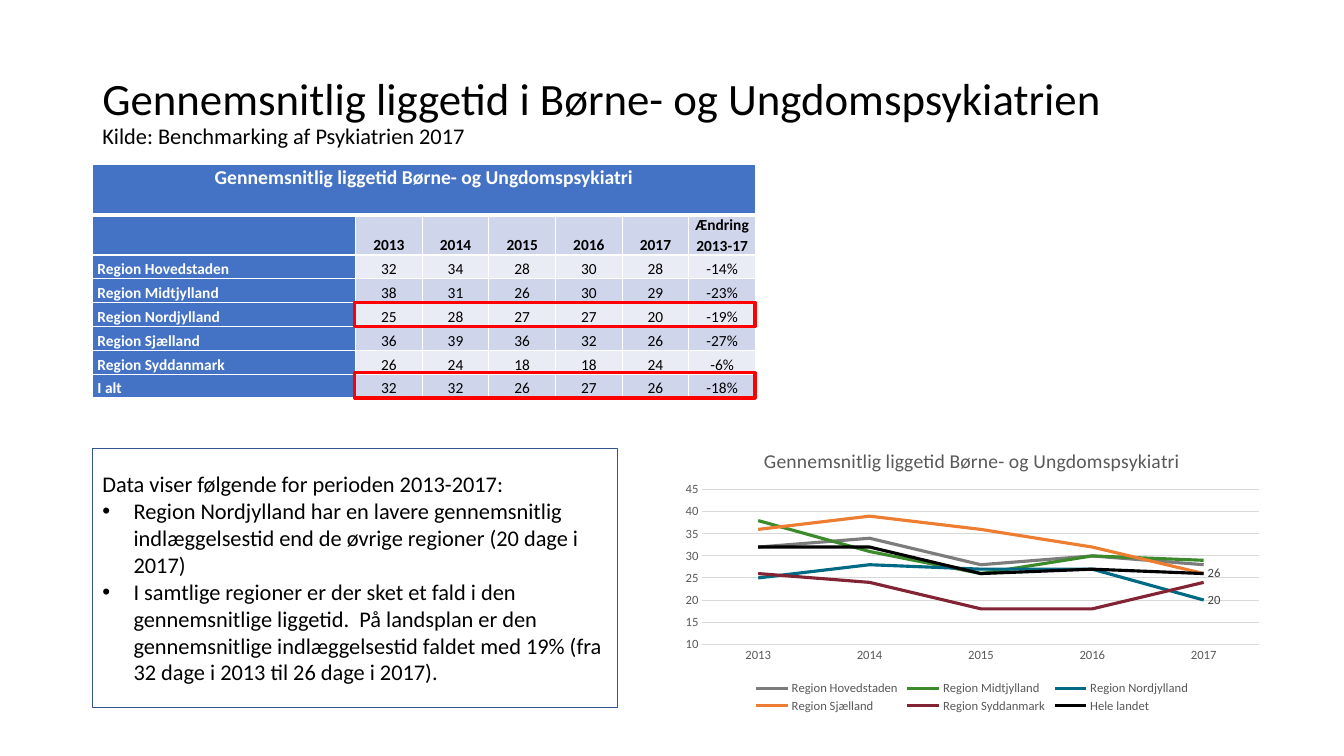
"""Build the slide on average length of stay in child and youth psychiatry."""
from dataclasses import dataclass

from lxml import etree
from pptx import Presentation
from pptx.chart.data import CategoryChartData
from pptx.dml.color import RGBColor
from pptx.enum.chart import XL_CHART_TYPE, XL_LABEL_POSITION, XL_LEGEND_POSITION, XL_TICK_MARK
from pptx.enum.shapes import MSO_SHAPE
from pptx.enum.text import MSO_ANCHOR, PP_ALIGN
from pptx.oxml.ns import qn
from pptx.util import Inches, Length, Pt

LINE_CHART = XL_CHART_TYPE.LINE
LABEL_RIGHT = XL_LABEL_POSITION.RIGHT
LEGEND_BOTTOM = XL_LEGEND_POSITION.BOTTOM
NO_TICK = XL_TICK_MARK.NONE
RECTANGLE = MSO_SHAPE.RECTANGLE
TOP, MIDDLE, BOTTOM = MSO_ANCHOR.TOP, MSO_ANCHOR.MIDDLE, MSO_ANCHOR.BOTTOM
LEFT, CENTER = PP_ALIGN.LEFT, PP_ALIGN.CENTER
PAGE_WIDTH, PAGE_HEIGHT = Inches(13.33), Inches(7.5)


@dataclass(frozen=True)
class Theme:
    font: str = "Calibri"
    ink: str = "000000"
    white: str = "FFFFFF"
    header: str = "4472C4"
    dark_band: str = "CFD5EA"
    light_band: str = "E9EBF5"
    frame: str = "325491"
    highlight: str = "FF0000"
    chart_text: str = "595959"
    label_text: str = "404040"
    grid: str = "D9D9D9"
    title_size: float = 32
    body_size: float = 16
    heading_size: float = 14
    cell_size: float = 11
    chart_size: float = 9


@dataclass(frozen=True)
class Area:
    """Place and size in percent of the slide."""
    left: float
    top: float
    width: float
    height: float

    def box(self) -> tuple[Length, Length, Length, Length]:
        return across(self.left), down(self.top), across(self.width), down(self.height)


@dataclass(frozen=True)
class Region:
    name: str
    days: tuple[int, ...]
    change: str
    color: str
    chart_name: str = ""
    labelled: bool = False


THEME = Theme()
HEADING = "Gennemsnitlig liggetid Børne- og Ungdomspsykiatri"
YEARS = ("2013", "2014", "2015", "2016", "2017")
REGIONS = (
    Region("Region Hovedstaden", (32, 34, 28, 30, 28), "-14%", "7C7C7C"),
    Region("Region Midtjylland", (38, 31, 26, 30, 29), "-23%", "3C8A2B"),
    Region("Region Nordjylland", (25, 28, 27, 27, 20), "-19%", "006983", labelled=True),
    Region("Region Sjælland", (36, 39, 36, 32, 26), "-27%", "ED7D31"),
    Region("Region Syddanmark", (26, 24, 18, 18, 24), "-6%", "822433"),
    Region("I alt", (32, 32, 26, 27, 26), "-18%", "000000", "Hele landet", True),
)
FINDINGS = (
    "Region Nordjylland har en lavere gennemsnitlig indlæggelsestid end de øvrige regioner "
    "(20 dage i 2017)",
    "I samtlige regioner er der sket et fald i den gennemsnitlige liggetid.  På landsplan er den "
    "gennemsnitlige indlæggelsestid faldet med 19% (fra 32 dage i 2013 til 26 dage i 2017).",
)
TITLE_AREA = Area(6.88, 5.33, 86.25, 19.33)
TABLE_AREA = Area(6.88, 21.73, 49.34, 30.96)
CHART_AREA = Area(50.04, 57.2, 44.56, 37.87)
FINDINGS_AREA = Area(6.88, 59.33, 39.08, 34.27)
HIGHLIGHT_AREAS = (Area(26.4, 40, 29.78, 3.2), Area(26.4, 49.33, 29.78, 3.33))
COLUMN_SHARES = (19.58,) + (4.96,) * 6
ROW_SHARES = (6.67, 5.33) + (3.16,) * 6
PLOT_LAYOUT = (0.05, 0.2, 0.93, 0.54)
LEGEND_LAYOUT = (0.13, 0.86, 0.74, 0.13)


def across(share: float) -> Length:
    return Length(round(PAGE_WIDTH * share / 100))


def down(share: float) -> Length:
    return Length(round(PAGE_HEIGHT * share / 100))


def style(font, size: float, color: str = THEME.ink, bold: bool = False) -> None:
    font.name, font.size, font.bold = THEME.font, Pt(size), bold
    font.color.rgb = RGBColor.from_string(color)


def add_title(page) -> None:
    frame = page.shapes.add_textbox(*TITLE_AREA.box()).text_frame
    frame.word_wrap, frame.vertical_anchor = True, MIDDLE
    para = frame.paragraphs[0]
    para.line_spacing = 0.9
    span = para.add_run()
    span.text = "Gennemsnitlig liggetid i Børne- og Ungdomspsykiatrien"
    style(span.font, THEME.title_size)
    para.add_line_break()
    span = para.add_run()
    span.text = "Kilde: Benchmarking af Psykiatrien 2017"
    style(span.font, THEME.body_size)


def set_borders(cell, row: int) -> None:
    properties = cell._tc.get_or_add_tcPr()
    thick = {(0, "lnB"), (1, "lnT")}
    for side in ("lnL", "lnR", "lnT", "lnB"):
        width = Pt(3 if (row, side) in thick else 1)
        line = etree.SubElement(properties, qn(f"a:{side}"), w=str(width))
        fill = etree.SubElement(line, qn("a:solidFill"))
        etree.SubElement(fill, qn("a:srgbClr"), val=THEME.white)


def fill_cell(cell, text: str, row: int, column: int) -> None:
    set_borders(cell, row)
    blue = row == 0 or column == 0
    band = THEME.dark_band if row % 2 else THEME.light_band
    cell.fill.solid()
    cell.fill.fore_color.rgb = RGBColor.from_string(THEME.header if blue else band)
    cell.margin_left = cell.margin_right = Inches(0.05)
    cell.margin_top = cell.margin_bottom = 0
    cell.vertical_anchor = BOTTOM if row else TOP
    cell.text = text
    for para in cell.text_frame.paragraphs:
        para.alignment = LEFT if row and column == 0 else CENTER
        para.line_spacing = 1.07
        style(para.font, THEME.cell_size if row else THEME.heading_size,
              THEME.white if blue else THEME.ink, bold=blue or row == 1)


def add_stay_table(page) -> None:
    rows = [(HEADING,) + ("",) * 6, ("", *YEARS, "Ændring\n2013-17")]
    rows += [(region.name, *map(str, region.days), region.change) for region in REGIONS]
    table = page.shapes.add_table(len(rows), len(COLUMN_SHARES), *TABLE_AREA.box()).table
    for column, share in zip(table.columns, COLUMN_SHARES):
        column.width = across(share)
    for row, share in zip(table.rows, ROW_SHARES):
        row.height = down(share)
    for row, texts in enumerate(rows):
        for column, text in enumerate(texts):
            fill_cell(table.cell(row, column), text, row, column)
    table.cell(0, 0).merge(table.cell(0, len(COLUMN_SHARES) - 1))


def set_layout(parent, index: int, shares: tuple[float, ...], inner: bool = False) -> None:
    for old in parent.findall(qn("c:layout")):
        parent.remove(old)
    layout = etree.Element(qn("c:layout"))
    manual = etree.SubElement(layout, qn("c:manualLayout"))
    settings = [("layoutTarget", "inner")] if inner else []
    settings += [("xMode", "edge"), ("yMode", "edge"), *zip("xywh", map(str, shares))]
    for name, value in settings:
        etree.SubElement(manual, qn(f"c:{name}"), val=value)
    parent.insert(index, layout)


def set_line(line, color: str, width: float) -> None:
    line.color.rgb = RGBColor.from_string(color)
    line.width = Pt(width)


def add_stay_chart(page) -> None:
    data = CategoryChartData(number_format="0")
    data.categories = YEARS
    for region in REGIONS:
        data.add_series(region.chart_name or region.name, region.days)
    chart = page.shapes.add_chart(LINE_CHART, *CHART_AREA.box(), data).chart
    style(chart.font, THEME.chart_size, THEME.chart_text)
    chart.has_title = True
    chart.chart_title.text_frame.text = HEADING
    style(chart.chart_title.text_frame.paragraphs[0].font, THEME.heading_size, THEME.chart_text)
    chart.has_legend = True
    chart.legend.position, chart.legend.include_in_layout = LEGEND_BOTTOM, False
    style(chart.legend.font, THEME.chart_size, THEME.chart_text)
    days, years = chart.value_axis, chart.category_axis
    for axis in (days, years):
        axis.major_tick_mark = axis.minor_tick_mark = NO_TICK
        style(axis.tick_labels.font, THEME.chart_size, THEME.chart_text)
    days.minimum_scale, days.maximum_scale, days.major_unit = 10, 45, 5
    days.format.line.fill.background()
    set_line(days.major_gridlines.format.line, THEME.grid, 0.75)
    set_line(years.format.line, THEME.grid, 0.75)
    chart.plots[0].vary_by_categories = False
    for series, region in zip(chart.plots[0].series, REGIONS):
        series.smooth = False
        set_line(series.format.line, region.color, 2.25)
        if region.labelled:
            series.data_labels.show_value = False
            label = series.points[len(YEARS) - 1].data_label
            label.position = LABEL_RIGHT
            style(label.font, THEME.chart_size, THEME.label_text)
    set_layout(chart.plots[0]._element.getparent(), 0, PLOT_LAYOUT, inner=True)
    set_layout(chart.legend._element, 1, LEGEND_LAYOUT)


def add_frame(page, area: Area, color: str, width: float):
    box = page.shapes.add_shape(RECTANGLE, *area.box())
    box.shadow.inherit = False
    box.fill.background()
    set_line(box.line, color, width)
    return box


def add_findings(page) -> None:
    frame = add_frame(page, FINDINGS_AREA, THEME.frame, 1).text_frame
    frame.word_wrap, frame.vertical_anchor = True, MIDDLE
    frame.text = "\n".join(("Data viser følgende for perioden 2013-2017:", *FINDINGS))
    for index, para in enumerate(frame.paragraphs):
        para.alignment = LEFT
        if index:
            properties = para._p.get_or_add_pPr()
            properties.set("marL", str(Inches(0.31)))
            properties.set("indent", str(-Inches(0.31)))
            etree.SubElement(properties, qn("a:buFont"), typeface="Arial")
            etree.SubElement(properties, qn("a:buChar"), char="•")
        style(para.font, THEME.body_size)


def main() -> None:
    deck = Presentation()
    deck.slide_width, deck.slide_height = PAGE_WIDTH, PAGE_HEIGHT
    page = deck.slides.add_slide(deck.slide_layouts[6])
    add_title(page)
    add_stay_table(page)
    add_stay_chart(page)
    add_findings(page)
    for area in HIGHLIGHT_AREAS:
        add_frame(page, area, THEME.highlight, 2.25)
    deck.save("out.pptx")


if __name__ == "__main__":
    main()
